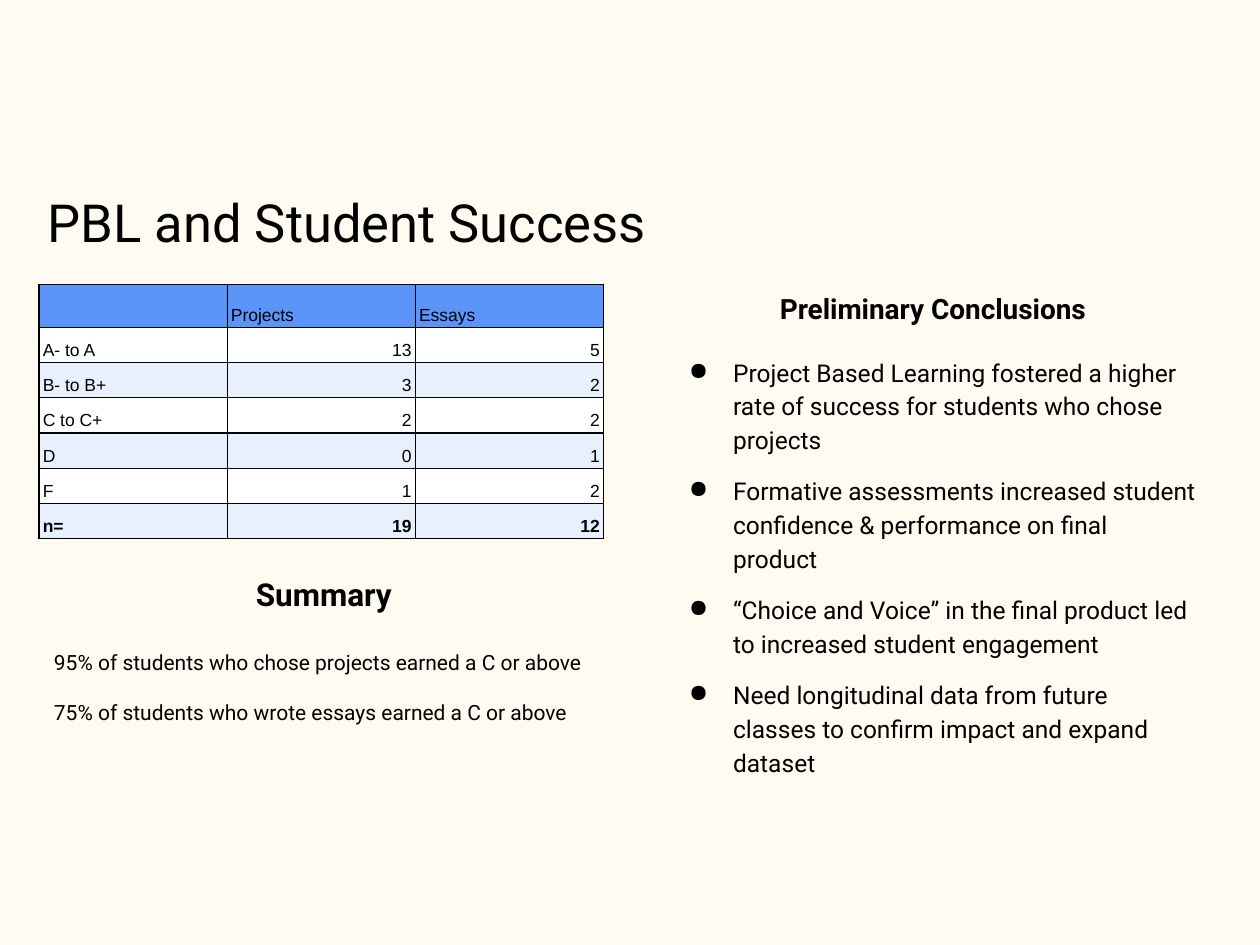
"""Build a slide that compares project and essay grades."""
import pptx
import pptx.util
import pptx.dml.color
import pptx.enum.text
import pptx.oxml
import pptx.oxml.ns

Inches, Pt = pptx.util.Inches, pptx.util.Pt
ALIGN, ANCHOR = pptx.enum.text.PP_ALIGN, pptx.enum.text.MSO_ANCHOR
WIDTH, HEIGHT = Inches(10), Inches(7.5)
COLORS = {"background": "FFFBF0", "text": "000000", "header": "5B95F9",
          "odd": "FFFFFF", "even": "E8F0FE", "border": "000000"}
GRADES = [
    ("", "Projects", "Essays"),
    ("A- to A", "13", "5"),
    ("B- to B+", "3", "2"),
    ("C to C+", "2", "2"),
    ("D", "0", "1"),
    ("F", "1", "2"),
    ("n=", "19", "12"),
]
SUMMARY = [
    "95% of students who chose projects earned a C or above",
    "75% of students who wrote essays earned a C or above",
]
CONCLUSIONS = [
    "Project Based Learning fostered a higher rate of success for students who chose projects",
    "Formative assessments increased student confidence & performance on final product",
    "“Choice and Voice” in the final product led to increased student engagement",
    "Need longitudinal data from future classes to confirm impact and expand dataset",
]


def rgb(name):
    return pptx.dml.color.RGBColor.from_string(COLORS[name])


def share(left, top, width, height):
    return (round(left * WIDTH), round(top * HEIGHT),
            round(width * WIDTH), round(height * HEIGHT))


def set_frame(tf):
    tf.word_wrap = True
    tf.auto_size = pptx.enum.text.MSO_AUTO_SIZE.NONE
    tf.vertical_anchor = ANCHOR.TOP
    tf.margin_left = tf.margin_right = tf.margin_top = tf.margin_bottom = Inches(0.1)


def write(p, text, size, font="Roboto", bold=False, align=ALIGN.LEFT, before=0, spacing=1.0):
    p.text = text
    p.alignment, p.line_spacing, p.space_before = align, spacing, Pt(before)
    p.font.name, p.font.size, p.font.bold = font, Pt(size), bold
    p.font.color.rgb = rgb("text")


def add_bullet(p):
    pPr = p._p.get_or_add_pPr()
    pPr.set("marL", str(Inches(0.5)))
    pPr.set("indent", str(Inches(-0.35)))
    bullet = pptx.oxml.parse_xml(f'<a:buChar {pptx.oxml.ns.nsdecls("a")} char="●"/>')
    pPr.insert_element_before(bullet, "a:tabLst", "a:defRPr", "a:extLst")


def add_title(slide, text, box):
    sp = slide.shapes.title
    sp.left, sp.top, sp.width, sp.height = box
    set_frame(sp.text_frame)
    write(sp.text_frame.paragraphs[0], text, 30)


def add_section(slide, box, heading, size, items, item_size, gaps, spacing=1.0, bullets=False):
    tf = slide.shapes.add_textbox(*box).text_frame
    set_frame(tf)
    write(tf.paragraphs[0], heading, size, bold=True, align=ALIGN.CENTER, spacing=spacing)
    for i, item in enumerate(items):
        p = tf.add_paragraph()
        write(p, item, item_size, before=gaps[min(i, 1)], spacing=spacing)
        if bullets:
            add_bullet(p)


def add_borders(cell):
    tcPr = cell._tc.get_or_add_tcPr()
    for i, side in enumerate(("lnL", "lnR", "lnT", "lnB")):
        tcPr.insert(i, pptx.oxml.parse_xml(
            f'<a:{side} {pptx.oxml.ns.nsdecls("a")} w="{Pt(0.75)}"><a:solidFill>'
            f'<a:srgbClr val="{COLORS["border"]}"/></a:solidFill></a:{side}>'))


def format_cell(cell, text, fill, bold, align):
    cell.fill.solid()
    cell.fill.fore_color.rgb = rgb(fill)
    cell.vertical_anchor = ANCHOR.BOTTOM
    cell.margin_left = cell.margin_right = Inches(0.03)
    cell.margin_top = cell.margin_bottom = Inches(0.02)
    write(cell.text_frame.paragraphs[0], text, 10, "Arial", bold, align, spacing=1.15)
    add_borders(cell)


def add_grades(slide, box, rows):
    table = slide.shapes.add_table(len(rows), len(rows[0]), *box).table
    table.first_row = table.horz_banding = False
    for r, row in enumerate(rows):
        table.rows[r].height = Inches(0.28 if r else 0.34)
        fill = ("even", "odd")[r % 2] if r else "header"
        for c, text in enumerate(row):
            align = ALIGN.RIGHT if r and c else ALIGN.LEFT
            format_cell(table.cell(r, c), text, fill, r == len(rows) - 1, align)


def main():
    prs = pptx.Presentation()
    prs.slide_width, prs.slide_height = WIDTH, HEIGHT
    slide = prs.slides.add_slide(prs.slide_layouts[5])
    slide.background.fill.solid()
    slide.background.fill.fore_color.rgb = rgb("background")
    add_title(slide, "PBL and Student Success", share(0.028, 0.188, 0.932, 0.09))
    add_section(slide, share(0.522, 0.29, 0.437, 0.505), "Preliminary Conclusions", 16,
                CONCLUSIONS, 14, (16, 10), spacing=1.15, bullets=True)
    add_section(slide, share(0.033, 0.595, 0.448, 0.225), "Summary", 18,
                SUMMARY, 12, (21, 14))
    add_grades(slide, share(0.031, 0.301, 0.448, 0.27), GRADES)
    prs.save("out.pptx")


if __name__ == "__main__":
    main()
